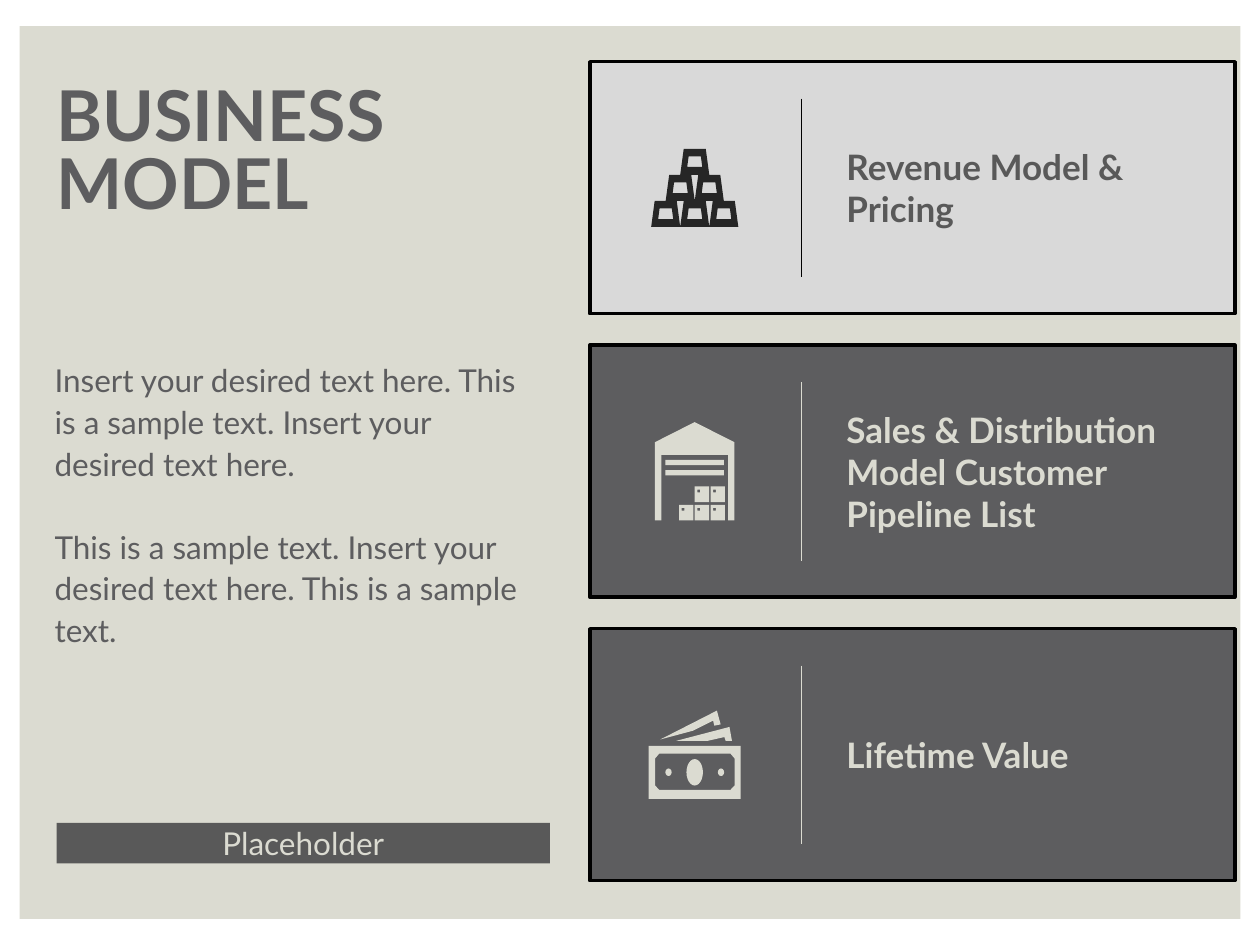
from lxml.etree import SubElement
from pptx import Presentation
from pptx.dml.color import RGBColor
from pptx.enum.shapes import MSO_CONNECTOR, MSO_SHAPE as Preset
from pptx.enum.text import MSO_ANCHOR as Anchor, PP_ALIGN as Align
from pptx.oxml.ns import qn
from pptx.util import Pt

FONT = "Lato"
STONE = RGBColor(0xDB, 0xDB, 0xD1)
SLATE = RGBColor(0x5D, 0x5D, 0x5F)
GRAY = RGBColor(0x59, 0x59, 0x59)
SILVER = RGBColor(0xD9, 0xD9, 0xD9)
INK = RGBColor(0x26, 0x26, 0x26)
BLACK = RGBColor(0, 0, 0)

CARD_LEFT, CARD_TOP, CARD_PITCH = 337, 35.3, 162
CARD_WIDTH, CARD_HEIGHT = 368.6, 144
MIDDLE = 60


def paint(shape, fill, border=None):
    """Give a shape a flat fill and an optional border colour."""
    shape.shadow.inherit = False
    shape.fill.solid()
    shape.fill.fore_color.rgb = fill
    if border is None:
        shape.line.fill.background()
    else:
        shape.line.color.rgb = border
        shape.line.width = Pt(2)


def add_preset(shapes, preset, left, top, width, height, fill, border=None):
    """Add a painted preset shape."""
    shape = shapes.add_shape(preset, Pt(left), Pt(top), Pt(width), Pt(height))
    paint(shape, fill, border)
    return shape


def add_outline(shapes, origin, contours, fill):
    """Add one freeform whose inner contours are holes."""
    left, top = origin
    placed = [[(Pt(left + x), Pt(top + y)) for x, y in contour] for contour in contours]
    builder = shapes.build_freeform(*placed[0][0])
    for index, (start, *rest) in enumerate(placed):
        if index:
            builder.move_to(*start)
        builder.add_line_segments(rest, close=True)
    paint(builder.convert_to_shape(), fill)


def set_text(frame, lines, size, color, bold=False, align=Align.LEFT, spacing=None, gap=0):
    """Write lines as equally styled paragraphs, gap points apart."""
    frame.word_wrap = True
    for index, line in enumerate(lines):
        para = frame.add_paragraph() if index else frame.paragraphs[0]
        para.text = line
        para.alignment = align
        para.line_spacing = spacing
        para.space_before = Pt(gap if index else 0)
        para.font.name = FONT
        para.font.size = Pt(size)
        para.font.bold = bold
        para.font.color.rgb = color


def set_margins(frame, horizontal, vertical):
    """Set the inner margins of a text frame."""
    frame.margin_left = frame.margin_right = Pt(horizontal)
    frame.margin_top = frame.margin_bottom = Pt(vertical)


def add_text(shapes, left, top, width, height, lines, size, color, **style):
    """Add a text box and return its frame."""
    box = shapes.add_textbox(Pt(left), Pt(top), Pt(width), Pt(height))
    set_text(box.text_frame, lines, size, color, **style)
    return box.text_frame


def add_divider(shapes, x, top, bottom, color):
    """Add a thin vertical line."""
    line = shapes.add_connector(MSO_CONNECTOR.STRAIGHT, Pt(x), Pt(top), Pt(x), Pt(bottom))
    line.line.color.rgb = color
    line.line.width = Pt(0.75)
    SubElement(line._element.spPr, qn("a:effectLst"))


def rectangle(left, top, width, height):
    """Return the corners of a rectangle."""
    right, bottom = left + width, top + height
    return [(left, top), (left, bottom), (right, bottom), (right, top)]


def trapezoid(center, top, bottom, top_width, bottom_width):
    """Return the corners of a symmetric trapezoid."""
    return [(center - bottom_width / 2, bottom), (center - top_width / 2, top),
            (center + top_width / 2, top), (center + bottom_width / 2, bottom)]


def draw_ingots(shapes, origin, color):
    """Draw a pyramid of six hollow ingots."""
    contours = []
    for row in range(3):
        top = 49.7 + 14.9 * row
        for column in range(row + 1):
            center = MIDDLE + 16.6 * (column - row / 2)
            contours.append(trapezoid(center, top, top + 14.9, 12.6, 16.6))
            contours.append(trapezoid(center, top + 4.3, top + 10.4, 7, 8.6))
    add_outline(shapes, origin, contours, color)


def draw_warehouse(shapes, origin, color):
    """Draw a warehouse with a shutter and stacked boxes."""
    left, top = origin
    for y in (65.5, 71.4):
        add_preset(shapes, Preset.RECTANGLE, left + 43.3, top + y, 33.4, 3, color)
    for column, row in ((2, 1), (1, 1), (2, 0), (1, 0), (0, 1)):
        x, y = 51 + 9 * column, 80.7 + 10.5 * row
        contours = [rectangle(x, y, 8.2, 8.9), rectangle(x + 1.5, y + 1.8, 1.6, 1.6)]
        add_outline(shapes, origin, contours, color)
    half = [(0, 43.9), (22.7, 55.4), (22.7, 100.1), (19.1, 100.1), (19.1, 62.6)]
    right = [(MIDDLE + x, y) for x, y in half]
    mirrored = [(MIDDLE - x, y) for x, y in reversed(half[1:])]
    add_outline(shapes, origin, [right + mirrored], color)


def draw_cash(shapes, origin, color):
    """Draw a banknote with two more notes fanned out behind it."""
    left, top = origin
    inner = [(37.4, 74.1), (39.8, 71.3), (80.4, 71.3), (82.8, 74.1),
             (82.8, 89.6), (80.4, 92.1), (39.8, 92.1), (37.4, 89.6)]
    add_outline(shapes, origin, [rectangle(33.7, 66.9, 52.6, 30.3), inner], color)
    for center, width, height in ((60, 9.4, 15.1), (45, 3.6, 4.3), (75, 3.6, 4.3)):
        add_preset(shapes, Preset.OVAL, left + center - width / 2,
                   top + 82 - height / 2, width, height, color)
    back = [(70.5, 52.5), (71.2, 55.4), (74.8, 54.7), (72.7, 46.8), (40.3, 63.3), (59, 58.3)]
    front = [(67.6, 64), (77, 61.9), (77.7, 64), (81.3, 64), (79.9, 56.1), (49.6, 64)]
    for note in (back, front):
        add_outline(shapes, origin, [note], color)


def add_card(page, index, label, fill, text_color, line_color, icon_color, draw_icon):
    """Add one grouped card with its label, icon and divider."""
    shapes = page.shapes.add_group_shape().shapes
    left, top = CARD_LEFT, CARD_TOP + CARD_PITCH * index
    add_preset(shapes, Preset.RECTANGLE, left, top, CARD_WIDTH, CARD_HEIGHT, fill, BLACK)
    frame = add_text(shapes, left + 139.6, top + 20, 193.7, 104, [label], 20, text_color, bold=True)
    frame.vertical_anchor = Anchor.MIDDLE
    draw_icon(shapes, (left, top), icon_color)
    add_divider(shapes, left + 121, top + 21, top + 123, line_color)


def main():
    """Build the business model slide."""
    deck = Presentation()
    deck.slide_width, deck.slide_height = Pt(720), Pt(540)
    page = deck.slides.add_slide(deck.slide_layouts[6])
    shapes = page.shapes
    add_preset(shapes, Preset.RECTANGLE, 11.3, 14.9, 697.5, 510.2, STONE)

    title = add_text(shapes, 32.4, 50.4, 269.3, 146, ["BUSINESS", "MODEL"],
                     40, SLATE, bold=True, spacing=0.8)
    set_margins(title, 0, 0)
    body = add_text(shapes, 31.2, 199.4, 271.4, 252, [
        "Insert your desired text here. This is a sample text. Insert your desired text here.",
        "This is a sample text. Insert your desired text here. This is a sample text.",
    ], 18, SLATE, spacing=1.1, gap=23.7)
    set_margins(body, 0, 5)

    bar = add_preset(shapes, Preset.RECTANGLE, 32.4, 470.3, 281.8, 23.2, GRAY)
    set_text(bar.text_frame, ["Placeholder"], 18, STONE, align=Align.CENTER)
    set_margins(bar.text_frame, 0, 0)
    bar.text_frame.vertical_anchor = Anchor.MIDDLE

    light = (SILVER, GRAY, BLACK, INK)
    dark = (SLATE, STONE, STONE, STONE)
    cards = [("Revenue Model & Pricing", light, draw_ingots),
             ("Sales & Distribution Model Customer Pipeline List", dark, draw_warehouse),
             ("Lifetime Value", dark, draw_cash)]
    for index, (label, colors, draw_icon) in enumerate(cards):
        add_card(page, index, label, *colors, draw_icon)
    deck.save("out.pptx")


if __name__ == "__main__":
    main()
